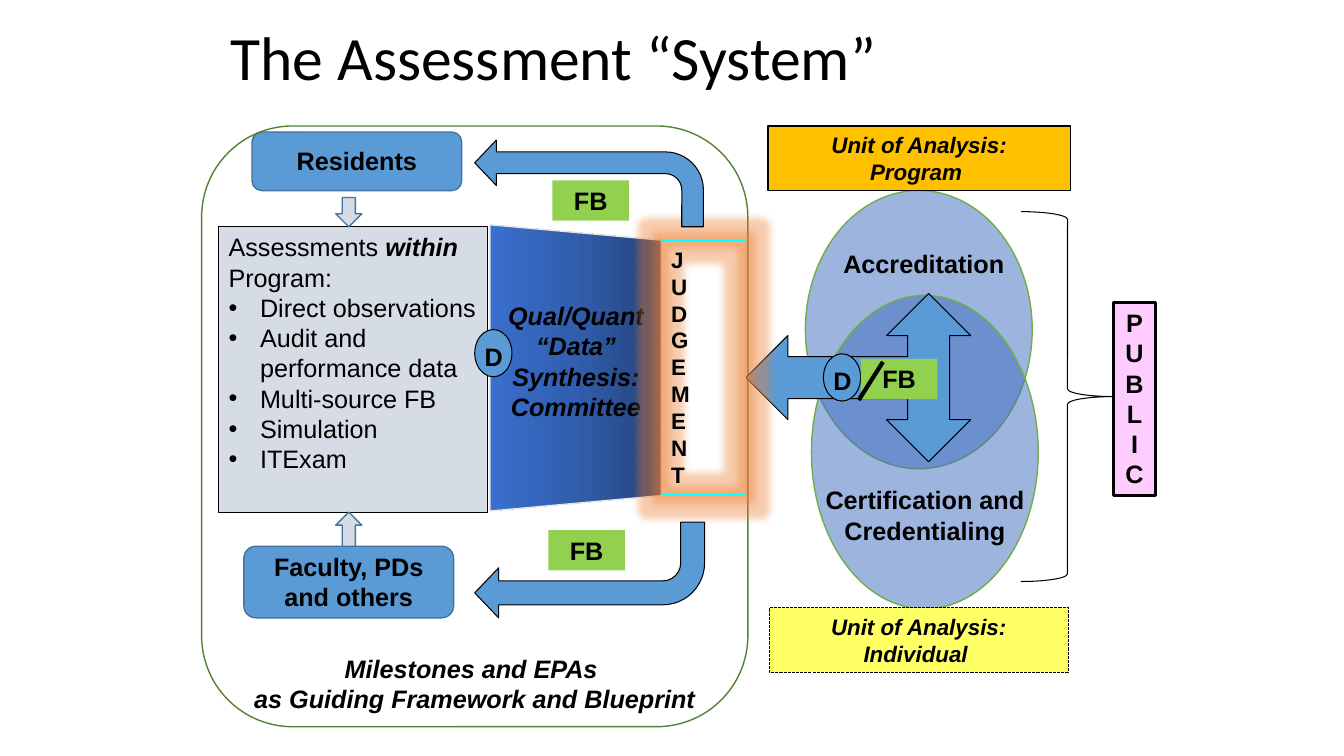
from copy import deepcopy
from dataclasses import dataclass

from pptx import Presentation
from pptx.dml.color import RGBColor
from pptx.enum.dml import MSO_LINE
from pptx.enum.shapes import MSO_CONNECTOR, MSO_SHAPE as Kind
from pptx.enum.text import MSO_ANCHOR as Anchor, PP_ALIGN as Align
from pptx.oxml.ns import qn
from pptx.util import Pt
from lxml.etree import SubElement


@dataclass(frozen=True)
class Theme:
    font: str = "Arial"
    title_font: str = "Calibri"
    title_size: int = 44
    body_size: int = 18
    small_size: int = 16
    black: str = "000000"
    blue: str = "5B9BD5"
    blue_edge: str = "43739E"
    pale: str = "D6DCE5"
    grey: str = "E7E6E6"
    venn: str = "3C6BBF"
    venn_edge: str = "70AD47"
    frame: str = "548235"
    feedback: str = "92D050"
    program: str = "FFC000"
    individual: str = "FFFF66"
    public: str = "FFCCFF"
    cyan: str = "00FFFF"
    glow: str = "ED7D31"
    funnel: tuple = ("23427A", "315EAD", "3A6FCE")


THEME = Theme()
BOLD = {"bold": True}
STRONG = {"bold": True, "italic": True}
BENT = (0.25, 0.262, 0.25, 0.438)


def rgb(value):
    return RGBColor.from_string(value)


def write(box, lines, size=THEME.body_size, style=BOLD, align=Align.CENTER,
          anchor=Anchor.TOP, font=THEME.font, bullets_from=None):
    """Fill a box; a line is a string or a list of (text, style) spans."""
    frame = box.text_frame
    frame.word_wrap = True
    frame.vertical_anchor = anchor
    for index, line in enumerate(lines):
        para = frame.paragraphs[0] if index == 0 else frame.add_paragraph()
        para.alignment = align
        if bullets_from is not None and index >= bullets_from:
            add_bullet(para)
        for text, look in [(line, style)] if isinstance(line, str) else line:
            span = para.add_run()
            span.text = text
            span.font.color.rgb = rgb(THEME.black)
            for name, value in {"name": font, "size": Pt(size), **look}.items():
                setattr(span.font, name, value)


def add_bullet(para, indent=22.5):
    props = para._p.get_or_add_pPr()
    props.set("marL", str(Pt(indent)))
    props.set("indent", str(-Pt(indent)))
    SubElement(props, qn("a:buFont"), typeface=THEME.font)
    SubElement(props, qn("a:buChar"), char="•")


def add_label(page, area, lines, **format_values):
    box = page.shapes.add_textbox(*map(Pt, area))
    write(box, lines, **format_values)
    return box


def add_figure(page, kind, area, fill=None, edge=THEME.black, width=0.75,
               adjust=(), flip="", rotation=0):
    shape = page.shapes.add_shape(kind, *map(Pt, area))
    shape.shadow.inherit = False
    shape.rotation = rotation
    for index, value in enumerate(adjust):
        shape.adjustments[index] = value
    for axis in flip:
        shape._element.spPr.xfrm.set("flip" + axis, "1")
    if fill:
        shape.fill.solid()
        shape.fill.fore_color.rgb = rgb(fill)
    else:
        shape.fill.background()
    if edge:
        shape.line.color.rgb = rgb(edge)
        shape.line.width = Pt(width)
    else:
        shape.line.fill.background()
    return shape


def add_funnel(page, area):
    funnel = add_figure(page, Kind.TRAPEZOID, area, edge=THEME.grey, width=1,
                        adjust=(0.09,), rotation=90)
    funnel.fill.gradient()
    funnel.fill.gradient_angle = 270
    stops = funnel._element.spPr.find(qn("a:gradFill")).find(qn("a:gsLst"))
    stops.insert(1, deepcopy(stops[0]))
    for stop, position, color in zip(funnel.fill.gradient_stops, (0, 0.5, 1), THEME.funnel):
        stop.position = position
        stop.color.rgb = rgb(color)


def add_venn_circle(page, area):
    circle = add_figure(page, Kind.OVAL, area, THEME.venn, THEME.venn_edge, 1)
    color = circle._element.spPr.find(qn("a:solidFill"))[0]
    SubElement(color, qn("a:alpha"), val="50000")


def add_glow(shape, radius):
    effects = shape._element.spPr.find(qn("a:effectLst"))
    glow = SubElement(effects, qn("a:glow"), rad=str(Pt(radius)))
    color = SubElement(glow, qn("a:srgbClr"), val=THEME.glow)
    SubElement(color, qn("a:alpha"), val="40000")


def add_feedback(page, left, top):
    tag = add_figure(page, Kind.RECTANGLE, (left, top, 54.7, 28.8), THEME.feedback, None)
    write(tag, ["FB"])


def add_data_badge(page, left, top):
    add_figure(page, Kind.OVAL, (left, top, 26.6, 33.8), THEME.blue)
    add_label(page, (left, top + 4.7, 26.6, 28.8), ["D"])


def add_slash(page, start, end):
    slash = page.shapes.add_connector(MSO_CONNECTOR.STRAIGHT, *map(Pt, start + end))
    slash.line.color.rgb = rgb(THEME.black)
    slash.line.width = Pt(3)
    SubElement(slash._element.spPr, qn("a:effectLst"))


def draw_program(page):
    # Assessments and their synthesis
    assessments = add_figure(page, Kind.RECTANGLE, (156.2, 162, 192.2, 203.8), THEME.pale)
    write(assessments,
          [[("Assessments ", {}), ("within", STRONG), (" Program:", {})],
           "Direct observations", "Audit and performance data",
           "Multi-source FB", "Simulation", "ITExam"],
          style={}, align=Align.LEFT, bullets_from=1)
    add_funnel(page, (308.9, 201.6, 204.5, 122.4))
    add_label(page, (350.6, 211, 121.7, 94.3),
              ["Qual/Quant “Data” Synthesis:", "Committee"], style=STRONG)

    # People who feed the assessments
    people = [((180, 94.3, 149.8, 41.8), 100.1, "Residents", (141.1, 20.9), ""),
              ((174.2, 390.2, 149.8, 51.1), 390.2, "Faculty, PDs and others",
               (365.8, 24.5), "V")]
    for area, text_top, text, (arrow_top, arrow_height), flip in people:
        add_figure(page, Kind.ROUNDED_RECTANGLE, area, THEME.blue, THEME.blue_edge, 1)
        add_label(page, (area[0], text_top, area[2], area[3]), [text])
        add_figure(page, Kind.DOWN_ARROW, (239.8, arrow_top, 18.7, arrow_height),
                   THEME.pale, THEME.blue_edge, 1, flip=flip)

    # Guiding framework
    add_figure(page, Kind.ROUNDED_RECTANGLE, (144, 90, 390.2, 429.1),
               edge=THEME.frame, width=1)
    add_label(page, (156.2, 463, 365.8, 51.1),
              ["Milestones and EPAs ", "as Guiding Framework and Blueprint"], style=STRONG)


def draw_oversight(page):
    # Overlapping bodies with their units of analysis
    add_venn_circle(page, (575.3, 136.1, 162, 198.7))
    add_label(page, (591.1, 174.2, 137.5, 28.8), ["Accreditation"])
    program = add_figure(page, Kind.RECTANGLE, (548.6, 90, 216, 46.1), THEME.program, width=1)
    add_venn_circle(page, (579.6, 211, 162, 223.9))
    add_label(page, (581.8, 342.7, 157.7, 51.1), ["Certification and Credentialing"])
    individual = add_figure(page, Kind.RECTANGLE, (549.4, 434.2, 213.8, 46.1),
                            THEME.individual)
    individual.line.dash_style = MSO_LINE.SQUARE_DOT
    for box, unit in ((program, "Program "), (individual, "Individual ")):
        write(box, ["Unit of Analysis:", unit], THEME.small_size, STRONG)
    add_figure(page, Kind.LEFT_RIGHT_UP_ARROW, (553, 189.4, 120.2, 160.6),
               THEME.blue, rotation=270)


def draw_feedback(page):
    # Judgement and the loops that return from it
    judgement = add_figure(page, Kind.RECTANGLE, (472.3, 172.1, 60.5, 181.4), edge=THEME.cyan)
    add_glow(judgement, 11)
    write(judgement, "JUDGEMENT", THEME.small_size, align=Align.LEFT)
    add_data_badge(page, 339.1, 235.4)
    add_figure(page, Kind.BENT_ARROW, (339.1, 100.1, 163.4, 61.9), THEME.blue,
               adjust=BENT, flip="H")
    add_feedback(page, 394.6, 128.9)
    add_figure(page, Kind.BENT_ARROW, (339.1, 373, 164.2, 68.4), THEME.blue,
               adjust=BENT, flip="HV")
    add_feedback(page, 391.7, 378.7)

    # Exchange with the oversight bodies
    add_data_badge(page, 588.2, 252.7)
    add_feedback(page, 614.9, 256.3)
    add_slash(page, (613.4, 285.8), (630.7, 258.5))


def draw_public(page):
    add_figure(page, Kind.RIGHT_BRACE, (729.4, 151.2, 66.2, 264.2), adjust=(0.083, 0.5))
    public = add_figure(page, Kind.RECTANGLE, (795.6, 216, 29.5, 138.2),
                        THEME.public, width=2.25)
    write(public, "PUBLIC")


def main():
    deck = Presentation()
    deck.slide_width, deck.slide_height = Pt(960), Pt(540)
    page = deck.slides.add_slide(deck.slide_layouts[6])
    title = add_label(page, (157.7, 15.1, 648, 56.2), ["The Assessment “System”"],
                      size=THEME.title_size, style={}, align=Align.LEFT,
                      anchor=Anchor.MIDDLE, font=THEME.title_font)
    title.text_frame.paragraphs[0].line_spacing = 0.9
    draw_program(page)
    draw_oversight(page)
    draw_feedback(page)
    draw_public(page)
    deck.save("out.pptx")


if __name__ == "__main__":
    main()
